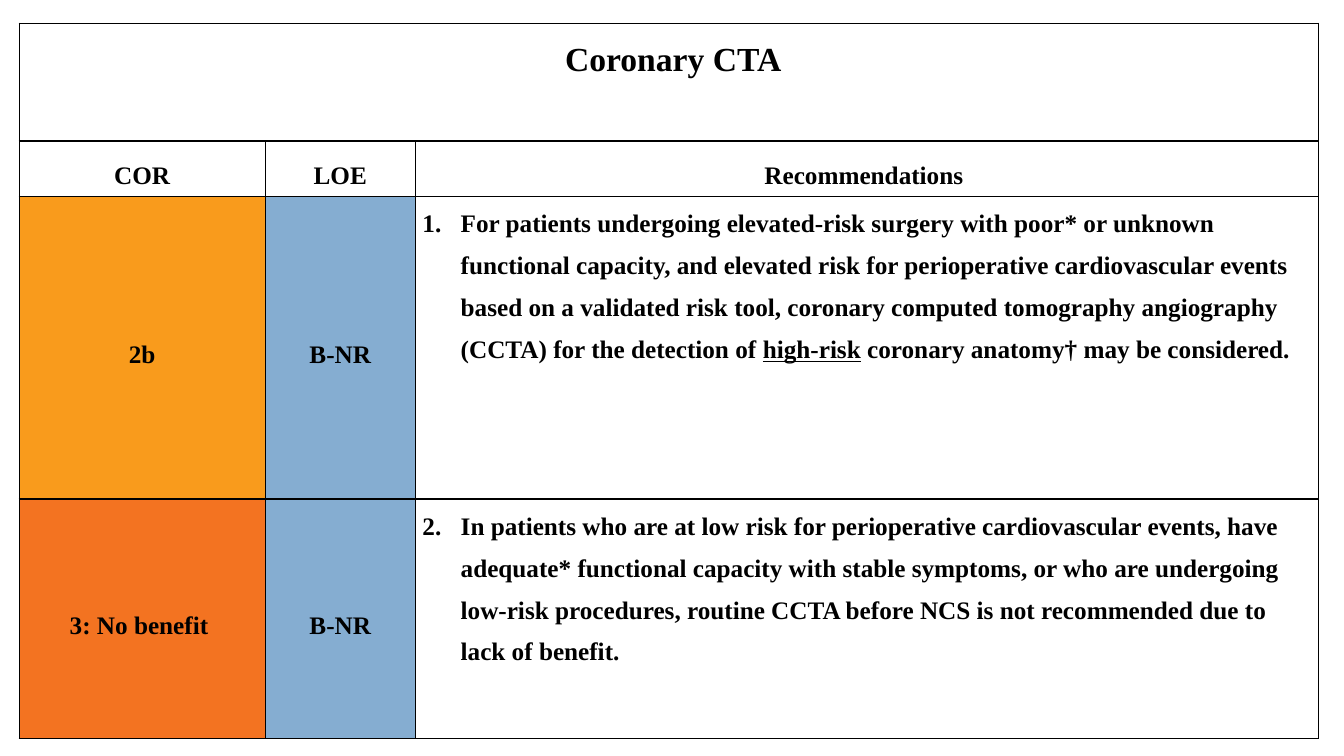
from lxml import etree
from pptx import Presentation
from pptx.dml.color import RGBColor
from pptx.enum.text import MSO_ANCHOR, PP_ALIGN
from pptx.oxml.ns import qn
from pptx.util import Inches, Pt

CENTER, LEFT = PP_ALIGN.CENTER, PP_ALIGN.LEFT
MIDDLE, TOP = MSO_ANCHOR.MIDDLE, MSO_ANCHOR.TOP
BLACK = RGBColor(0x00, 0x00, 0x00)
AMBER = RGBColor(0xF9, 0x9B, 0x1C)
ORANGE = RGBColor(0xF3, 0x73, 0x21)
BLUE = RGBColor(0x85, 0xAD, 0xD1)

COLUMN_WIDTHS = [2.44, 1.49, 8.96]
ROW_HEIGHTS = [1.17, 0.55, 3, 2.38]
HEADINGS = ["COR", "LOE", "Recommendations "]
# Class, class colour, level, and recommendation runs as (text, underlined)
RECOMMENDATIONS = [
    ("2b", AMBER, "B-NR", [
        ("For patients undergoing elevated-risk surgery with poor* or unknown "
         "functional capacity, and elevated risk for perioperative cardiovascular "
         "events based on a validated risk tool, coronary computed tomography "
         "angiography (CCTA) for the detection of ", False),
        ("high-risk", True),
        (" coronary anatomy† may be considered.", False)]),
    ("3: No benefit ", ORANGE, "B-NR", [
        ("In patients who are at low risk for perioperative cardiovascular events, "
         "have adequate* functional capacity with stable symptoms, or who are "
         "undergoing low-risk procedures, routine CCTA before NCS is not "
         "recommended due to lack of benefit.", False)]),
]


def fill_cell(cell, runs, size=18, align=CENTER, anchor=MIDDLE, margin=0, indent=0):
    cell.vertical_anchor = anchor
    cell.margin_left = cell.margin_right = Inches(0.07)
    cell.margin_top = cell.margin_bottom = 0
    paragraph = cell.text_frame.paragraphs[0]
    paragraph.alignment = align
    paragraph.line_spacing = 1.5
    properties = paragraph._p.get_or_add_pPr()
    properties.set("marL", str(Inches(margin)))
    properties.set("indent", str(Inches(indent)))
    for text, underlined in runs:
        run = paragraph.add_run()
        run.text = text
        run.font.name = "Times New Roman"
        run.font.size = Pt(size)
        run.font.bold = True
        run.font.underline = underlined
        run.font.color.rgb = BLACK
    return properties


presentation = Presentation()
presentation.slide_width = Inches(13.33)
presentation.slide_height = Inches(7.5)
slide = presentation.slides.add_slide(presentation.slide_layouts[6])

# Table grid
table = slide.shapes.add_table(
    len(ROW_HEIGHTS), len(COLUMN_WIDTHS), Inches(0.19), Inches(0.23),
    Inches(sum(COLUMN_WIDTHS)), Inches(sum(ROW_HEIGHTS))).table
table.first_row = False
table.horz_banding = False
for column, width in zip(table.columns, COLUMN_WIDTHS):
    column.width = Inches(width)
for row, height in zip(table.rows, ROW_HEIGHTS):
    row.height = Inches(height)

# Thin black borders, no fill
for cell in table.iter_cells():
    cell_properties = cell._tc.get_or_add_tcPr()
    for side in ("a:lnL", "a:lnR", "a:lnT", "a:lnB"):
        line = etree.SubElement(cell_properties, qn(side), w=str(Pt(1)))
        line_fill = etree.SubElement(line, qn("a:solidFill"))
        etree.SubElement(line_fill, qn("a:srgbClr"), val=str(BLACK))
    cell.fill.background()

# Title row
title_cell = table.cell(0, 0)
title_cell.merge(table.cell(0, 2))
fill_cell(title_cell, [(" Coronary CTA", False)], size=24, anchor=TOP,
          margin=0.24, indent=-0.25)

# Column headings
for column_index, heading in enumerate(HEADINGS):
    fill_cell(table.cell(1, column_index), [(heading, False)],
              margin=0.24, indent=-0.25)

# Numbered recommendations
for number, (cor, cor_color, loe, runs) in enumerate(RECOMMENDATIONS, start=1):
    row_index = number + 1
    for column_index, (text, color) in enumerate([(cor, cor_color), (loe, BLUE)]):
        cell = table.cell(row_index, column_index)
        cell.fill.solid()
        cell.fill.fore_color.rgb = color
        fill_cell(cell, [(text, False)])
    properties = fill_cell(table.cell(row_index, 2), runs, align=LEFT, anchor=TOP,
                           margin=0.38, indent=-0.38)
    etree.SubElement(properties, qn("a:buFont"), typeface="+mj-lt")
    etree.SubElement(properties, qn("a:buAutoNum"), type="arabicPeriod",
                     startAt=str(number))

presentation.save("out.pptx")
